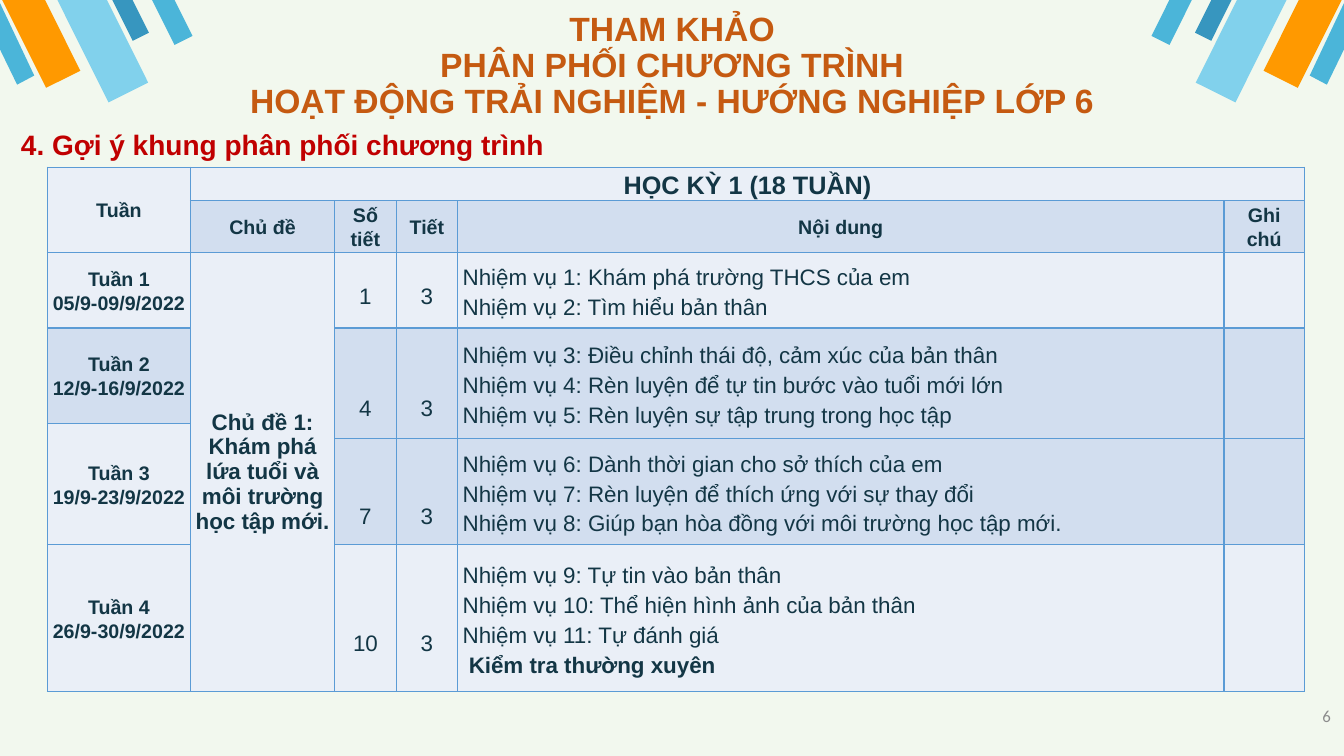
"""Build a slide with the first weeks of a school term plan."""
from dataclasses import dataclass

from lxml import etree
from pptx import Presentation
from pptx.dml.color import RGBColor
from pptx.enum.shapes import MSO_SHAPE
from pptx.enum.text import MSO_ANCHOR, PP_ALIGN
from pptx.oxml.ns import qn
from pptx.util import Pt

PX = 9144
WIDE, HIGH = 1333, 750
BAR = MSO_SHAPE.FLOWCHART_MANUAL_INPUT
LEFT, MID, RIGHT = PP_ALIGN.LEFT, PP_ALIGN.CENTER, PP_ALIGN.RIGHT
TOP, CENTER, BOTTOM = MSO_ANCHOR.TOP, MSO_ANCHOR.MIDDLE, MSO_ANCHOR.BOTTOM
HUES = {
    "page": "F2F8EE", "title": "C55A11", "head": "C00000", "ink": "133645",
    "grey": "8C8C8C", "line": "5B9BD5", "light": "EAEFF7", "dark": "D2DEEF",
    "deep": "3796BF", "gold": "FF9900", "pale": "81D1EC", "blue": "4BB5D9",
}


@dataclass
class Bar:
    x: int
    y: int
    w: int
    h: int
    hue: str


@dataclass
class Week:
    row: int
    span: int
    name: str
    days: str


@dataclass
class Topic:
    row: int
    span: int
    count: str
    drop: int
    tasks: str
    test: str = ""


BARS = [
    Bar(120, -9, 18, 48, "deep"), Bar(21, -18, 38, 102, "gold"),
    Bar(79, -20, 44, 118, "pale"), Bar(160, -11, 20, 54, "blue"),
]
EDGE = [(17, 84), (34, 75), (0, 3), (0, 49)]
COLS = [142, 143, 61, 61, 760, 80]
ROWS = [31, 51, 75, 95, 15, 105, 146]
HEADS = ["Chủ đề", "Số tiết", "Tiết", "Nội dung", "Ghi chú"]
WEEKS = [
    Week(2, 1, "Tuần 1", "05/9-09/9/2022"),
    Week(3, 1, "Tuần 2", "12/9-16/9/2022"),
    Week(4, 2, "Tuần 3", "19/9-23/9/2022"),
    Week(6, 1, "Tuần 4", "26/9-30/9/2022"),
]
TOPICS = [
    Topic(2, 1, "1", 0, "Nhiệm vụ 1: Khám phá trường THCS của em\n"
          "Nhiệm vụ 2: Tìm hiểu bản thân"),
    Topic(3, 2, "4", 38, "Nhiệm vụ 3: Điều chỉnh thái độ, cảm xúc của bản thân\n"
          "Nhiệm vụ 4: Rèn luyện để tự tin bước vào tuổi mới lớn\n"
          "Nhiệm vụ 5: Rèn luyện sự tập trung trong học tập"),
    Topic(5, 1, "7", 38, "Nhiệm vụ 6: Dành thời gian cho sở thích của em\n"
          "Nhiệm vụ 7: Rèn luyện để thích ứng với sự thay đổi\n"
          "Nhiệm vụ 8: Giúp bạn hòa đồng với môi trường học tập mới."),
    Topic(6, 1, "10", 38, "Nhiệm vụ 9: Tự tin vào bản thân\n"
          "Nhiệm vụ 10: Thể hiện hình ảnh của bản thân\n"
          "Nhiệm vụ 11: Tự đánh giá", "Kiểm tra thường xuyên"),
]


def tint(hue: str) -> RGBColor:
    return RGBColor.from_string(HUES[hue])


def put(frame, text: str, size: int = 14, hue: str = "ink", bold: bool = True,
        align=MID, lead: float = 1.1, face: str = "Arial",
        more: bool = False, inset: int = 0) -> None:
    for i, line in enumerate(text.split("\n")):
        para = frame.add_paragraph() if more or i else frame.paragraphs[0]
        para.text = line
        para.alignment, para.line_spacing = align, lead
        if inset:
            para._p.get_or_add_pPr().set("marL", str(inset * PX))
        for run in para.runs:
            font = run.font
            font.name, font.size, font.bold = face, Pt(size), bold
            font.color.rgb = tint(hue)


def pad(frame, gap: int, anchor) -> None:
    frame.word_wrap = True
    frame.vertical_anchor = anchor
    frame.margin_left = frame.margin_right = gap * PX
    frame.margin_top = frame.margin_bottom = gap * PX


def place(shape, x: int, y: int, w: int, h: int) -> None:
    shape.left, shape.top = x * PX, y * PX
    shape.width, shape.height = w * PX, h * PX


def paint(shape, hue: str) -> None:
    shape.shadow.inherit = False
    shape.fill.solid()
    shape.fill.fore_color.rgb = tint(hue)
    shape.line.fill.background()


def fan(shapes, flip: bool) -> None:
    for bar in BARS:
        x = bar.x if flip else WIDE - bar.x - bar.w
        shape = shapes.add_shape(BAR, x * PX, bar.y * PX, bar.w * PX, bar.h * PX)
        paint(shape, bar.hue)
        shape.rotation = 333.5 if flip else 26.5
        if flip:
            shape._element.spPr.find(qn("a:xfrm")).set("flipH", "1")
    dots = [(x if flip else WIDE - x, y) for x, y in EDGE]
    path = shapes.build_freeform(*dots[0], scale=PX)
    path.add_line_segments(dots[1:], close=True)
    paint(path.convert_to_shape(), "blue")


def rule(cell, hue: str) -> None:
    props = cell._tc.get_or_add_tcPr()
    for i, side in enumerate(("lnL", "lnR", "lnT", "lnB")):
        line = etree.Element(qn("a:" + side), w=str(Pt(1)))
        fill = etree.SubElement(line, qn("a:solidFill"))
        etree.SubElement(fill, qn("a:srgbClr"), val=HUES[hue])
        props.insert(i, line)


def grid(shapes):
    table = shapes.add_table(len(ROWS), len(COLS), 47 * PX, 166 * PX,
                             sum(COLS) * PX, sum(ROWS) * PX).table
    table.first_row = table.horz_banding = False
    for col, w in zip(table.columns, COLS):
        col.width = w * PX
    for r, (row, h) in enumerate(zip(table.rows, ROWS)):
        row.height = h * PX
        for cell in row.cells:
            cell.margin_left = cell.margin_right = 5 * PX
            cell.margin_top = cell.margin_bottom = 0
            cell.vertical_anchor = CENTER
            cell.fill.solid()
            cell.fill.fore_color.rgb = tint("dark" if r % 2 else "light")
            rule(cell, "line")
    return table


def join(table, row: int, col: int, down: int = 1, over: int = 1):
    cell = table.cell(row, col)
    if down * over > 1:
        cell.merge(table.cell(row + down - 1, col + over - 1))
    return cell


def fill(table) -> None:
    put(join(table, 0, 0, down=2).text_frame, "Tuần")
    put(join(table, 0, 1, over=5).text_frame, "HỌC KỲ 1 (18 TUẦN)", size=18)
    for col, head in enumerate(HEADS, 1):
        put(table.cell(1, col).text_frame, head)
    put(join(table, 2, 1, down=5).text_frame,
        "Chủ đề 1: Khám phá lứa tuổi và môi trường học tập mới.", size=16, lead=1.0)
    for week in WEEKS:
        put(join(table, week.row, 0, week.span).text_frame,
            f"{week.name}\n{week.days}")
    for topic in TOPICS:
        for col, text in ((2, topic.count), (3, "3")):
            cell = join(table, topic.row, col, topic.span)
            cell.margin_top = topic.drop * PX
            put(cell.text_frame, text, size=16, bold=False, lead=1.5)
        frame = join(table, topic.row, 4, topic.span).text_frame
        put(frame, topic.tasks, size=16, bold=False, align=LEFT, lead=1.2)
        if topic.test:
            put(frame, topic.test, size=16, align=LEFT, lead=1.2,
                more=True, inset=6)
        join(table, topic.row, 5, topic.span)


def main() -> None:
    deck = Presentation()
    deck.slide_width, deck.slide_height = WIDE * PX, HIGH * PX
    slide = deck.slides.add_slide(deck.slide_layouts[5])
    slide.background.fill.solid()
    slide.background.fill.fore_color.rgb = tint("page")
    shapes = slide.shapes
    fan(shapes, True)
    fan(shapes, False)
    title = shapes.title
    place(title, 175, -22, 983, 152)
    pad(title.text_frame, 10, BOTTOM)
    put(title.text_frame, "THAM KHẢO\vPHÂN PHỐI CHƯƠNG TRÌNH\v"
        "HOẠT ĐỘNG TRẢI NGHIỆM - HƯỚNG NGHIỆP LỚP 6",
        size=24, hue="title", lead=0.9)
    page = shapes.add_textbox(1253 * PX, 690 * PX, 80 * PX, 57 * PX).text_frame
    pad(page, 13, TOP)
    put(page, "6", size=12, hue="grey", bold=False, align=RIGHT,
        lead=1.0, face="Calibri")
    head = shapes.add_textbox(11 * PX, 122 * PX, 1224 * PX, 44 * PX).text_frame
    head.word_wrap = True
    put(head, "4. Gợi ý khung phân phối chương trình", size=20, hue="head",
        align=LEFT, lead=1.0)
    fill(grid(shapes))
    deck.save("out.pptx")


if __name__ == "__main__":
    main()
